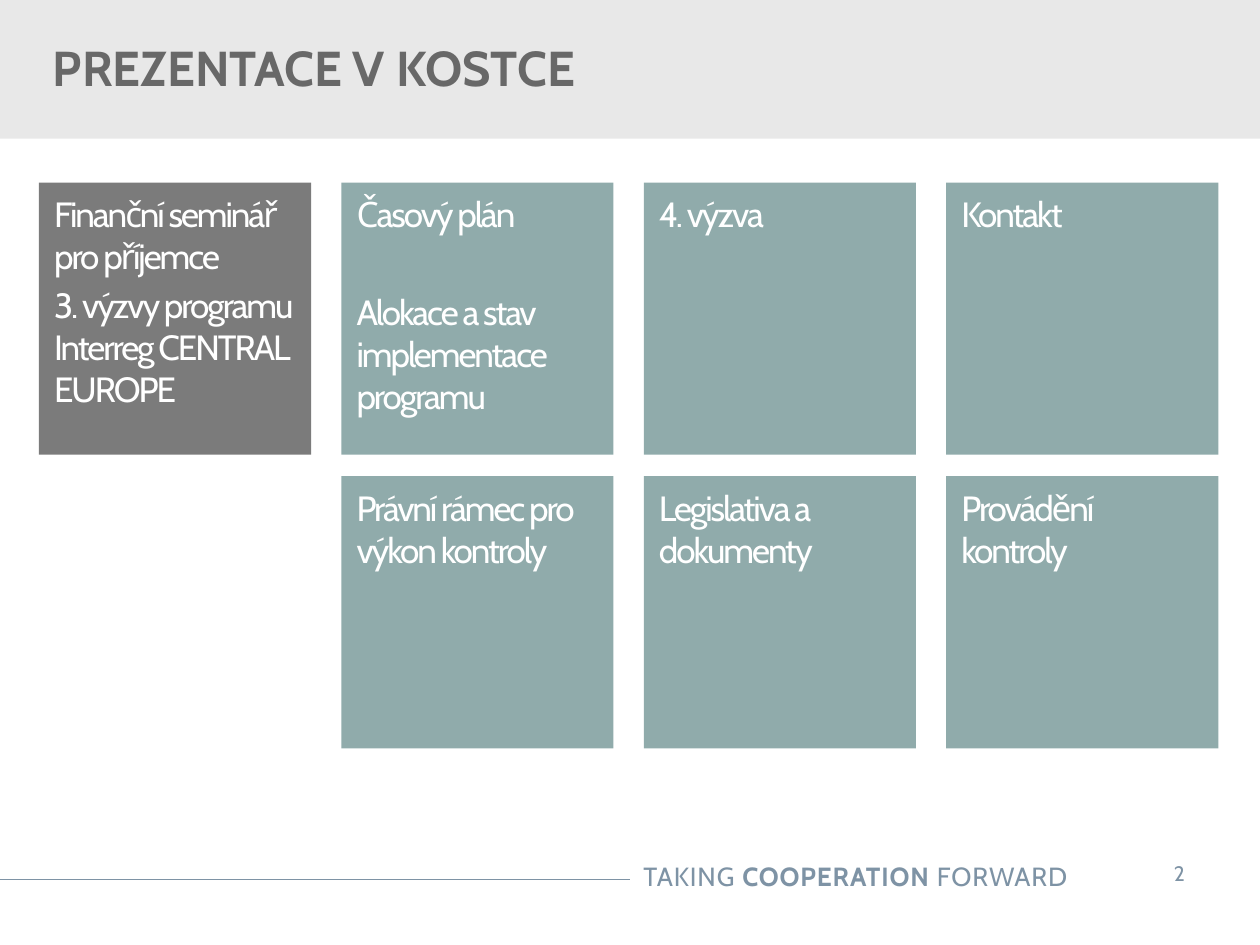
from pptx import Presentation
from pptx import util as u
from pptx.dml.color import RGBColor
from pptx.enum import shapes, text
from pptx.oxml.ns import qn
from lxml import etree

BAND = RGBColor(0xE8, 0xE8, 0xE8)
TITLE = RGBColor(0x68, 0x68, 0x68)
GRAY = RGBColor(0x7B, 0x7B, 0x7B)
TEAL = RGBColor(0x90, 0xAB, 0xAB)
SLATE = RGBColor(0x7E, 0x93, 0xA5)
WHITE = RGBColor(0xFF, 0xFF, 0xFF)

HEADING = "PREZENTACE V KOSTCE"
TILES = [
    (0, 0, GRAY, 4, ["Finanční seminář pro příjemce",
                     "3. výzvy programu Interreg CENTRAL EUROPE"]),
    (1, 0, TEAL, 32, ["Časový plán", "Alokace a stav implementace programu"]),
    (2, 0, TEAL, 0, ["4. výzva"]),
    (3, 0, TEAL, 0, ["Kontakt"]),
    (1, 1, TEAL, 0, ["Právní rámec pro výkon kontroly"]),
    (2, 1, TEAL, 0, ["Legislativa a dokumenty"]),
    (3, 1, TEAL, 0, ["Provádění kontroly"]),
]
MOTTO = [("TAKING ", False), ("COOPERATION", True), (" FORWARD", False)]
PAGE = "2"

LEFT, TOP, SIDE = 0.31, 1.45, 2.16
COL_STEP, ROW_STEP = 2.4, 2.33


def inches(*values):
    return [u.Inches(v) for v in values]


def frame(sp, margins, anchor, wrap=True):
    tf = sp.text_frame
    names = ("margin_left", "margin_top", "margin_right", "margin_bottom")
    settings = dict(zip(names, inches(*margins)), vertical_anchor=anchor,
                    word_wrap=wrap, auto_size=text.MSO_AUTO_SIZE.NONE)
    for name, value in settings.items():
        setattr(tf, name, value)
    return tf


def add_run(p, words, size, color, bold=False, spacing=0):
    r = p.add_run()
    r.text = words
    settings = {"name": "Cabin", "size": u.Pt(size), "bold": bold}
    for name, value in settings.items():
        setattr(r.font, name, value)
    r.font.color.rgb = color
    if spacing:
        r.font._element.set("spc", str(round(spacing * 100)))


def add_box(s, at, color):
    sp = s.shapes.add_shape(shapes.MSO_SHAPE.RECTANGLE, *inches(*at))
    sp.shadow.inherit = False
    sp.fill.solid()
    sp.fill.fore_color.rgb = color
    sp.line.fill.background()
    return sp


def add_title(s):
    sp = s.shapes.title
    s.shapes._spTree.append(sp._element)
    sp.left, sp.top, sp.width, sp.height = inches(0.08, 0.16, 7.1, 0.75)
    p = frame(sp, (0.34, 0.05, 0.1, 0.05), text.MSO_ANCHOR.MIDDLE).paragraphs[0]
    p.alignment = text.PP_ALIGN.LEFT
    add_run(p, HEADING, 28, TITLE, True)


def add_tile(s, col, row, color, gap, lines):
    at = (LEFT + col * COL_STEP, TOP + row * ROW_STEP, SIDE, SIDE)
    tf = frame(add_box(s, at, color), (0.12, 0.08, 0.12, 0.12), text.MSO_ANCHOR.TOP)
    for i, line in enumerate(lines):
        p = tf.add_paragraph() if i else tf.paragraphs[0]
        p.alignment = text.PP_ALIGN.LEFT
        p.space_before = u.Pt(gap if i else 0)
        add_run(p, line, 20, WHITE, spacing=-1.2)


def add_footer(s):
    rule = s.shapes.add_connector(shapes.MSO_CONNECTOR.STRAIGHT,
                                  *inches(0, 6.98, 5, 6.98))
    rule.line.color.rgb = SLATE
    rule.line.width = u.Pt(0.75)
    etree.SubElement(rule._element.spPr, qn("a:effectLst"))

    sp = s.shapes.add_textbox(*inches(3.88, 6.78, 4.69, 0.35))
    p = frame(sp, (0.1, 0.05, 0.1, 0.05), text.MSO_ANCHOR.TOP).paragraphs[0]
    p.alignment = text.PP_ALIGN.RIGHT
    for words, bold in MOTTO:
        add_run(p, words, 15, SLATE, bold, 0.5)

    sp = s.shapes.add_textbox(*inches(8.99, 6.73, 0.74, 0.4))
    p = frame(sp, (0.2, 0.1, 0.2, 0.1), text.MSO_ANCHOR.TOP, False).paragraphs[0]
    p.alignment = text.PP_ALIGN.CENTER
    add_run(p, PAGE, 12, SLATE)


def main():
    prs = Presentation()
    prs.slide_width, prs.slide_height = inches(10, 7.5)
    s = prs.slides.add_slide(prs.slide_layouts[5])
    add_box(s, (0, 0, 10, 1.1), BAND)
    add_footer(s)
    add_title(s)
    for tile in TILES:
        add_tile(s, *tile)
    prs.save("out.pptx")


if __name__ == "__main__":
    main()
